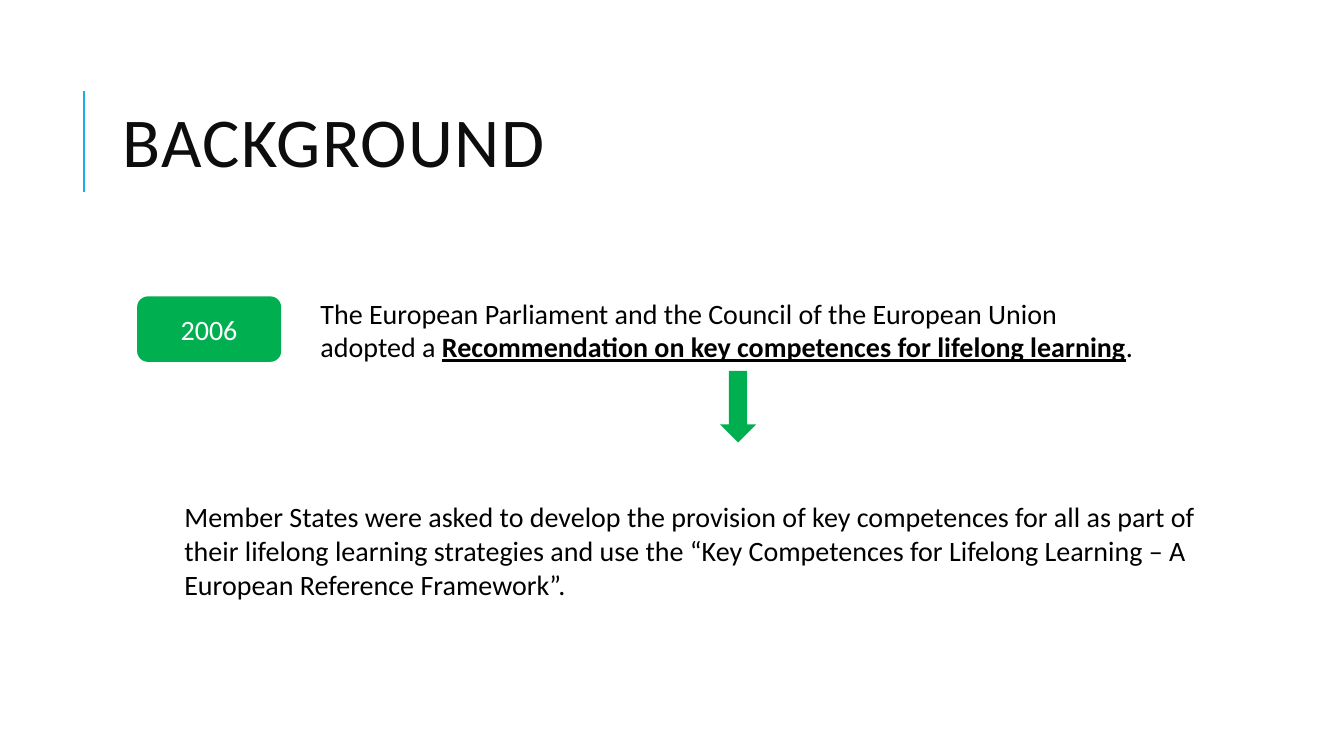
from dataclasses import dataclass

from lxml import etree
from pptx import Presentation
from pptx.dml.color import RGBColor
from pptx.enum.shapes import MSO_CONNECTOR, MSO_SHAPE
from pptx.enum.text import MSO_ANCHOR, PP_ALIGN
from pptx.oxml.ns import qn
from pptx.util import Inches, Pt

STRAIGHT = MSO_CONNECTOR.STRAIGHT
ROUNDED = MSO_SHAPE.ROUNDED_RECTANGLE
DOWN_ARROW = MSO_SHAPE.DOWN_ARROW
MIDDLE = MSO_ANCHOR.MIDDLE
TOP = MSO_ANCHOR.TOP
CENTER = PP_ALIGN.CENTER

FONT = "Calibri"
GREEN = "00B050"
BLUE = "1CADE4"
BLACK = "000000"
WHITE = "FFFFFF"
TITLE_INK = "0D0D0D"


@dataclass(frozen=True)
class Box:
    left: float
    top: float
    width: float
    height: float

    def lengths(self):
        return [Inches(v) for v in (self.left, self.top, self.width, self.height)]


@dataclass(frozen=True)
class Passage:
    box: Box
    pieces: tuple[str, ...]
    size: int = 20
    color: str = BLACK
    anchor: MSO_ANCHOR = TOP


@dataclass(frozen=True)
class GreenShape:
    kind: MSO_SHAPE
    box: Box
    label: str = ""


TITLE = Passage(Box(1.12, 0.64, 10.63, 1.64), ("BACKGROUND",), 50, TITLE_INK, MIDDLE)
ADOPTION = Passage(
    Box(3.08, 2.89, 8.47, 0.77),
    (
        "The European Parliament and the Council of the European Union adopted a ",
        "Recommendation on key competences for lifelong learning",
        ".",
    ),
)
REQUEST = Passage(
    Box(1.73, 4.91, 10.43, 1.11),
    (
        "Member States were asked to develop the provision of key competences "
        "for all as part of their lifelong learning strategies and use the "
        "“Key Competences for Lifelong Learning – A European Reference Framework”.",
    ),
)
GREEN_SHAPES = (
    GreenShape(ROUNDED, Box(1.36, 2.94, 1.43, 0.65), "2006"),
    GreenShape(DOWN_ARROW, Box(7.14, 3.68, 0.36, 0.71)),
)


def rgb(value: str) -> RGBColor:
    return RGBColor.from_string(value)


def style(paragraph, size: int, color: str) -> None:
    paragraph.font.name = FONT
    paragraph.font.size = Pt(size)
    paragraph.font.color.rgb = rgb(color)


def add_passage(slide, passage: Passage):
    frame = slide.shapes.add_textbox(*passage.box.lengths()).text_frame
    frame.word_wrap = True
    frame.vertical_anchor = passage.anchor
    paragraph = frame.paragraphs[0]
    for piece in passage.pieces:
        paragraph.add_run().text = piece
    style(paragraph, passage.size, passage.color)
    return paragraph


def add_green_shape(slide, item: GreenShape) -> None:
    shape = slide.shapes.add_shape(item.kind, *item.box.lengths())
    shape.shadow.inherit = False
    shape.fill.solid()
    shape.fill.fore_color.rgb = rgb(GREEN)
    shape.line.fill.background()
    if item.label:
        shape.text_frame.vertical_anchor = MIDDLE
        paragraph = shape.text_frame.paragraphs[0]
        paragraph.text = item.label
        paragraph.alignment = CENTER
        style(paragraph, 20, WHITE)


def add_title_rule(slide) -> None:
    rule = slide.shapes.add_connector(
        STRAIGHT, Inches(0.83), Inches(1.9), Inches(0.83), Inches(0.9)
    )
    rule.line.color.rgb = rgb(BLUE)
    rule.line.width = Pt(1.5)
    etree.SubElement(rule._element.spPr, qn("a:effectLst"))


def main() -> None:
    deck = Presentation()
    deck.slide_width = Inches(13.33)
    deck.slide_height = Inches(7.5)
    slide = deck.slides.add_slide(deck.slide_layouts[6])

    add_title_rule(slide)
    title = add_passage(slide, TITLE)
    title.line_spacing = 0.8
    title.runs[0].font._element.set("spc", "100")

    for item in GREEN_SHAPES:
        add_green_shape(slide, item)

    recommendation = add_passage(slide, ADOPTION).runs[1]
    recommendation.font.bold = True
    recommendation.font.underline = True
    add_passage(slide, REQUEST)

    deck.save("out.pptx")


if __name__ == "__main__":
    main()
